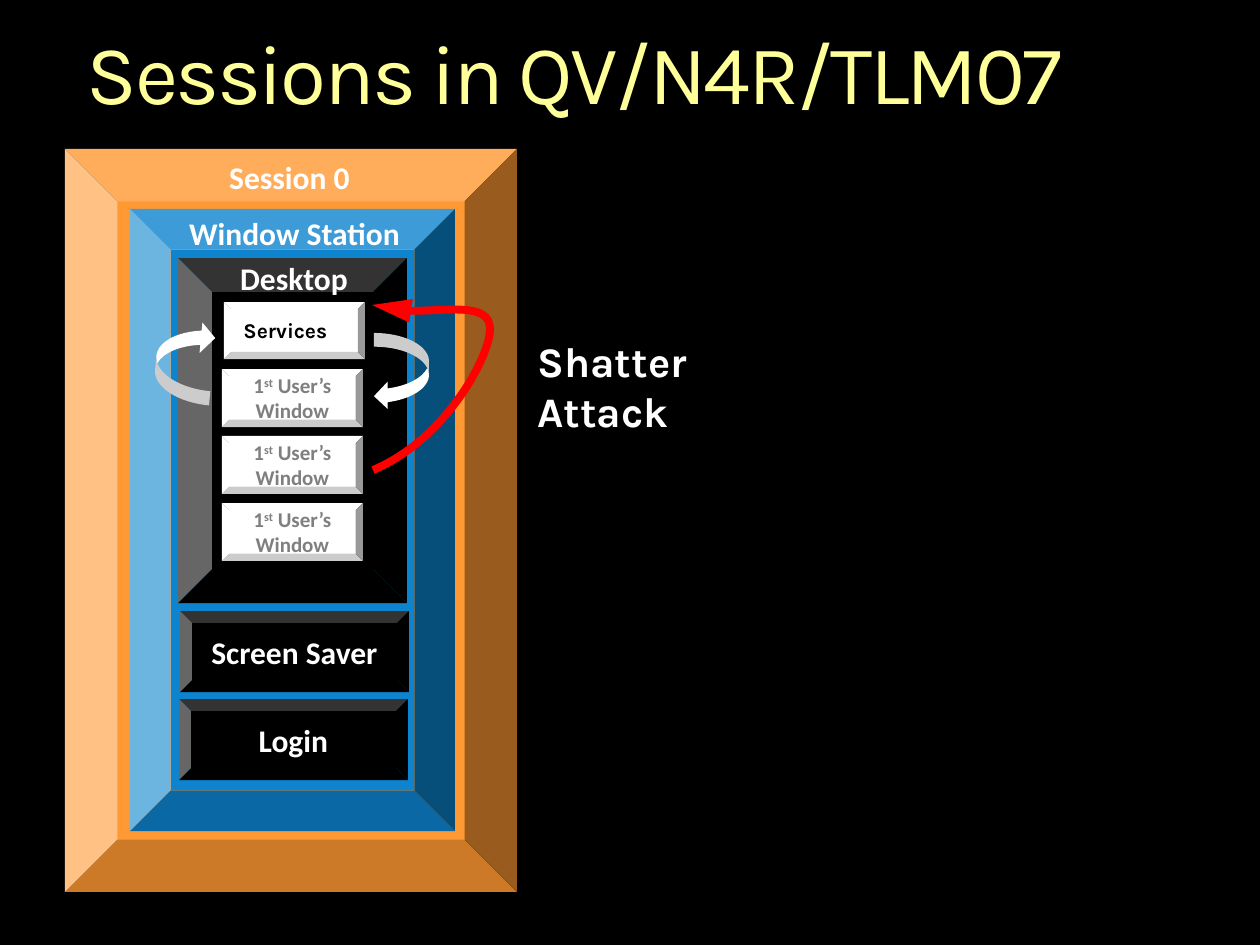
from lxml import etree
from pptx import Presentation
from pptx.dml.color import RGBColor
from pptx.enum.shapes import MSO_SHAPE as Shape
from pptx.enum.text import MSO_ANCHOR as Anchor, PP_ALIGN as Align
from pptx.oxml.ns import qn
from pptx.util import Pt

PX = 914400 / 126
COLORS = {
    "black": "000000", "white": "FFFFFF", "title": "FFFF99", "session": "FF9933",
    "station": "0D84CD", "gray": "7F7F7F", "red": "FF0000",
}
HEADING = {"name": "Calibri", "size": Pt(18), "bold": True}
WINDOW = {"name": "Calibri", "size": Pt(12), "bold": True}
SERVICE = {"name": "Karla", "size": Pt(12), "bold": True}
LABEL = {"name": "Karla", "size": Pt(24), "bold": True}
TITLE = {"name": "Karla", "size": Pt(48), "bold": False}


def add_solid(shapes, kind, box, color, adjustments):
    shape = shapes.add_shape(kind, *[round(v * PX) for v in box])
    shape.shadow.inherit = False
    shape.fill.solid()
    shape.fill.fore_color.rgb = RGBColor.from_string(COLORS[color])
    shape.line.fill.background()
    for index, value in enumerate(adjustments):
        shape.adjustments[index] = value
    return shape


def write(shape, text, style, color, align=Align.CENTER, anchor=Anchor.TOP, wrap=True):
    """Write text; a part between carets is superscript."""
    frame = shape.text_frame
    frame.word_wrap = wrap
    frame.vertical_anchor = anchor
    paragraph = frame.paragraphs[0]
    paragraph.alignment = align
    for line_number, line in enumerate(text.split("\n")):
        if line_number:
            paragraph.add_line_break()
        for part_number, part in enumerate(line.split("^")):
            run = paragraph.add_run()
            run.text = part
            for name, value in style.items():
                setattr(run.font, name, value)
            run.font.color.rgb = RGBColor.from_string(COLORS[color])
            if part_number % 2:
                run.font._element.set("baseline", "30000")
    return paragraph


presentation = Presentation()
presentation.slide_width = round(1260 * PX)
presentation.slide_height = round(945 * PX)
slide = presentation.slides.add_slide(presentation.slide_layouts[6])
slide.background.fill.solid()
slide.background.fill.fore_color.rgb = RGBColor.from_string(COLORS["black"])

# Nested frames, each grouped with its heading
frames = [
    ("Session 0", (65, 149, 452, 743), "session", 0.116, (188, 152, 203, 50)),
    ("Window Station", (130, 209, 325, 622), "station", 0.125, (134, 208, 321, 50)),
    ("Desktop", (178, 258, 229, 345), "black", 0.148, (188, 253, 212, 52)),
]
for text, box, color, depth, heading_box in frames:
    group = slide.shapes.add_group_shape()
    add_solid(group.shapes, Shape.BEVEL, box, color, [depth])
    heading = group.shapes.add_textbox(*[round(v * PX) for v in heading_box])
    write(heading, text, HEADING, "white")

# Other desktops, in the same group as the first
for text, left, top in [("Screen Saver", 180, 611), ("Login", 179, 699)]:
    desktop = add_solid(group.shapes, Shape.BEVEL, (left, top, 229, 81), "black", [0.148])
    write(desktop, text, HEADING, "white", anchor=Anchor.MIDDLE, wrap=False)

# Title
title = slide.shapes.add_textbox(*[round(v * PX) for v in (87, 32, 1173, 104)])
for side in ("left", "top", "right", "bottom"):
    setattr(title.text_frame, f"margin_{side}", 0)
paragraph = write(title, "Sessions in QV/N4R/TLM07", TITLE, "title", Align.LEFT)
paragraph.line_spacing = 0.9
paragraph.runs[0].font._element.set("spc", "-150")

# Service and user windows
service = add_solid(slide.shapes, Shape.BEVEL, (224, 302, 141, 57), "white", [0.125])
write(service, "Services", SERVICE, "black", Align.LEFT, Anchor.MIDDLE, False)
for row in range(3):
    window = add_solid(slide.shapes, Shape.BEVEL, (222, 369 + 67 * row, 141, 58),
                       "white", [0.125])
    write(window, "1^st^ User’s\nWindow", WINDOW, "gray", anchor=Anchor.MIDDLE, wrap=False)

# Message arrows between the windows
for box, rotation, sweep in [((156, 320, 57, 83), 185.3, 0.538),
                             ((374, 333, 55, 77), 0, 0.5)]:
    arrow = add_solid(slide.shapes, Shape.CURVED_LEFT_ARROW, box, "white",
                      [0.25, sweep, 0.25])
    arrow.rotation = rotation

# Attack curve: every three points after the start make one Bézier segment
points = [(445, 440), (490, 357), (490, 329), (490, 301), (394, 318), (372, 305)]
builder = slide.shapes.build_freeform(373, 470, scale=PX)
builder.add_line_segments(points, close=False)
attack = builder.convert_to_shape()
attack.shadow.inherit = False
attack.fill.background()
attack.line.color.rgb = RGBColor.from_string(COLORS["red"])
attack.line.width = Pt(4.5)
segments = list(attack._element.iter(qn("a:lnTo")))
for start in range(0, len(segments), 3):
    curve = etree.Element(qn("a:cubicBezTo"))
    segments[start].addprevious(curve)
    for segment in segments[start:start + 3]:
        curve.append(segment[0])
        segment.getparent().remove(segment)
etree.SubElement(attack.line._get_or_add_ln(), qn("a:tailEnd"), type="triangle", len="lg")

# Attack label
label = slide.shapes.add_textbox(*[round(v * PX) for v in (525, 329, 311, 63)])
write(label, "Shatter Attack", LABEL, "white", Align.LEFT)

presentation.save("out.pptx")
